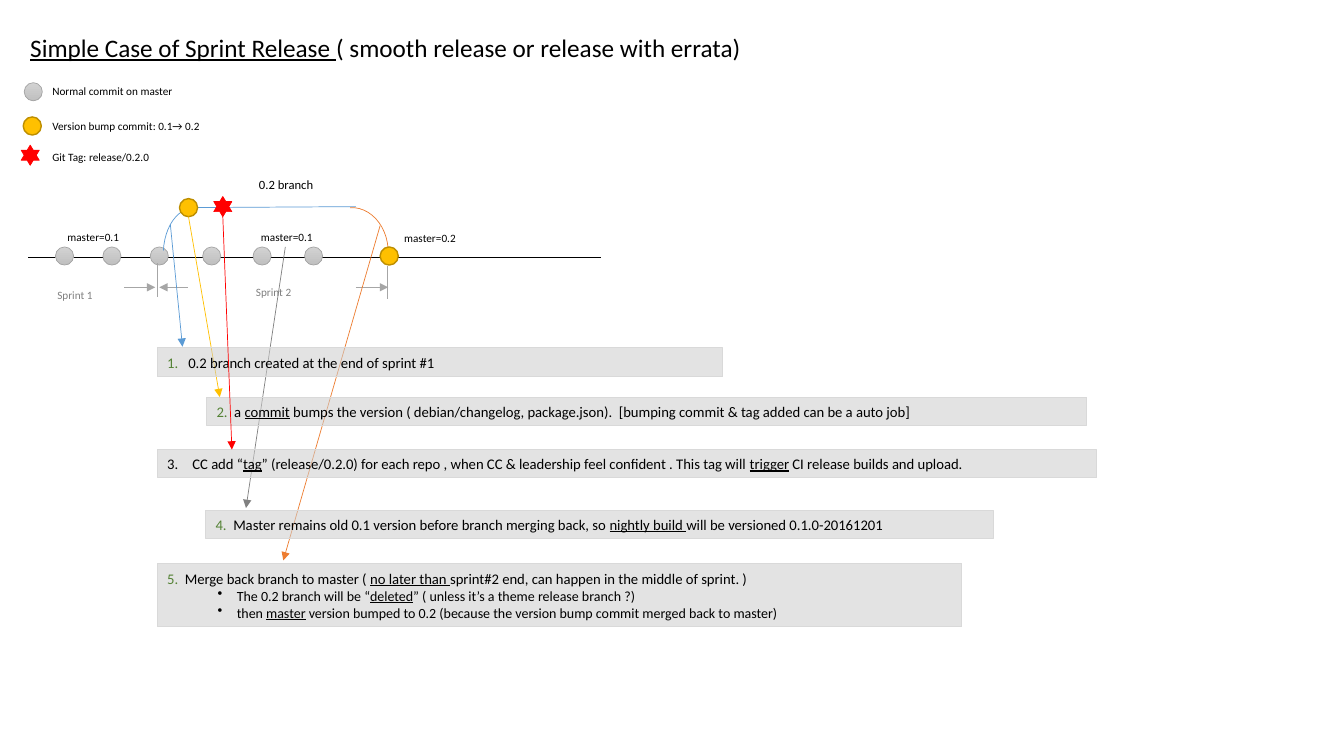
from typing import NamedTuple
from lxml.etree import SubElement as Sub
from pptx import Presentation
from pptx.dml.color import RGBColor as Rgb
from pptx.enum.shapes import MSO_CONNECTOR as Link, MSO_SHAPE as Kind
from pptx.enum.text import MSO_ANCHOR as Anchor, PP_ALIGN as Align
from pptx.oxml.ns import qn
from pptx.util import Inches, Pt

COLS, ROWS = 133.3, 75  # grid of square cells over the whole slide
CELL = Inches(0.1)
HUES = {
    "black": "000000", "grey": "808080", "rule": "A6A6A6", "edge": "A5A5A5",
    "light": "D2D2D2", "dark": "C0C0C0", "gold": "FFC000", "rim": "BD8E00",
    "red": "FF0000", "blue": "5B9BD5", "orange": "ED7D31", "green": "548235",
    "box": "CDCDCD", "frame": "D9D9D9",
}
DOT = 1.8
AXIS = 24.5  # top row of the commits on master


class Label(NamedTuple):
    text: str
    col: float
    row: float
    wide: float
    size: float = 8
    hue: str = "black"


class Line(NamedTuple):
    start: tuple[float, float]
    end: tuple[float, float]
    hue: str
    arrow: bool = False


class Curve(NamedTuple):
    col: float
    row: float
    wide: float
    high: float
    turn: float
    hue: str
    flip: bool = False


class Step(NamedTuple):
    """A numbered box; text between underscores is underlined."""
    num: str
    text: str
    col: float
    row: float
    wide: float
    high: float = 2.8
    indent: float = 1.75
    points: tuple[str, ...] = ()


LABELS = [
    Label("Normal commit on master", 4.2, 7.9, 20.2),
    Label("Version bump commit: 0.1→ 0.2", 4.2, 11.3, 20.2),
    Label("Git Tag: release/0.2.0", 4.2, 14.4, 20.2),
    Label("0.2 branch", 24.7, 17.1, 8.2, 9),
    Label("master=0.1", 5.7, 22.4, 9.5),
    Label("master=0.1", 24.9, 22.4, 9.5),
    Label("master=0.2", 39.1, 22.5, 9.5),
    Label("Sprint 1", 4.7, 28.1, 7, hue="grey"),
    Label("Sprint 2", 24.4, 27.8, 7, hue="grey"),
]
COMMITS = [(col, AXIS) for col in (5.5, 10.2, 14.9, 20.1, 25.1, 30.2)] + [(2.4, 8.2)]
BUMPS = [(37.7, AXIS), (17.8, 19.7), (2.3, 11.6)]
TAGS = [(21.2, 19.5), (2.1, 14.4)]
MASTER = Line((2.8, 25.5), (59.6, 25.5), "black")
BRANCH = Line((18.4, 20.6), (35.3, 20.5), "blue")
MARKS = [
    Line((15.6, 26.1), (15.6, 29.5), "rule"),
    Line((38.4, 26.4), (38.4, 29.7), "rule"),
    Line((12.3, 28.5), (15.4, 28.5), "rule", True),
    Line((35.3, 28.5), (38.5, 28.5), "rule", True),
    Line((18.6, 28.5), (15.8, 28.5), "rule", True),
]
ARROWS = [
    Line((16.9, 22.3), (18.1, 34.4), "blue", True),
    Line((18.7, 21.5), (21.8, 39.4), "gold", True),
    Line((37.7, 22.4), (28.1, 55.6), "orange", True),
    Line((28.3, 24.5), (24.4, 50.4), "grey", True),
]
TAG_ARROW = Line((22.1, 21.5), (23, 44.6), "red", True)
CURVES = [
    Curve(14.6, 22.3, 8.6, 5.4, 272.9, "blue"),
    Curve(30.7, 21.4, 8.6, 7, 266.4, "orange", True),
]
STEPS = [
    Step("1.", "0.2 branch created at the end of sprint #1", 15.6, 34.5, 56.1, 2.9, 2.1),
    Step("2.", "a _commit_ bumps the version ( debian/changelog, package.json).  "
         "[bumping commit & tag added can be a auto job]", 20.5, 39.4, 87.3),
    Step("", "CC add “_tag_” (release/0.2.0) for each repo , when CC & leadership feel "
         "confident . This tag will _trigger_ CI release builds and upload.",
         15.6, 44.6, 93.2, indent=2.5),
    Step("4.", "Master remains old 0.1 version before branch merging back, so "
         "_nightly build _will be versioned 0.1.0-20161201", 20.4, 50.6, 78.1),
    Step("5.", "Merge back branch to master ( _no later than _sprint#2 end, "
         "can happen in the middle of sprint. )", 15.6, 55.9, 79.8, 6.3, points=(
             "The 0.2 branch will be “_deleted_” ( unless it’s a theme release branch ?)",
             "then _master_ version bumped to 0.2 "
             "(because the version bump commit merged back to master)")),
]


def grid(*cells: float) -> list[int]:
    return [round(cell * CELL) for cell in cells]


def tint(name: str) -> Rgb:
    return Rgb.from_string(HUES[name])


def write(para, text: str, size: float, hue: str = "black") -> None:
    """Add runs, underlining every second part between underscores."""
    para.alignment = Align.LEFT
    for spot, part in enumerate(text.split("_")):
        if part:
            run = para.add_run()
            run.text = part
            form = {"name": "Calibri", "size": Pt(size), "underline": bool(spot % 2)}
            for key, value in form.items():
                setattr(run.font, key, value)
            run.font.color.rgb = tint(hue)


def hang(para, left: float, back: float, tag: str = "", **marks: str) -> None:
    """Set a hanging indent and, if a tag is given, a bullet."""
    props = para._p.get_or_add_pPr()
    props.set("marL", str(grid(left)[0]))
    props.set("indent", str(-grid(back)[0]))
    if tag:
        Sub(props, qn(tag), **marks)


def draw_label(shapes, label: Label) -> None:
    box = shapes.add_textbox(*grid(label.col, label.row, label.wide, 2.4))
    box.text_frame.word_wrap = True
    write(box.text_frame.paragraphs[0], label.text, label.size, label.hue)


def draw_line(shapes, line: Line) -> None:
    link = shapes.add_connector(Link.STRAIGHT, *grid(*line.start, *line.end))
    link.line.color.rgb = tint(line.hue)
    link.line.width = Pt(0.5)
    if line.arrow:
        Sub(link.line._get_or_add_ln(), qn("a:tailEnd"), type="triangle")
    Sub(link._element.spPr, qn("a:effectLst"))


def draw_shape(shapes, kind: Kind, area: tuple, edge: str, width: float, fill: str = ""):
    shape = shapes.add_shape(kind, *grid(*area))
    shape.shadow.inherit = False
    shape.line.color.rgb = tint(edge)
    shape.line.width = Pt(width)
    if fill:
        shape.fill.solid()
        shape.fill.fore_color.rgb = tint(fill)
    else:
        shape.fill.background()
    return shape


def draw_commit(shapes, col: float, row: float) -> None:
    fill = draw_shape(shapes, Kind.OVAL, (col, row, DOT, DOT), "edge", 0.5).fill
    fill.gradient()
    fill.gradient_angle = 270
    for stop, hue in zip(fill.gradient_stops, ("light", "dark")):
        stop.color.rgb = tint(hue)


def draw_curve(shapes, curve: Curve) -> None:
    area = (curve.col, curve.row, curve.wide, curve.high)
    arc = draw_shape(shapes, Kind.ARC, area, curve.hue, 0.5)
    arc.rotation = curve.turn
    if curve.flip:
        arc._element.spPr.xfrm.set("flipV", "1")


def draw_step(shapes, step: Step) -> None:
    area = (step.col, step.row, step.wide, step.high)
    box = draw_shape(shapes, Kind.RECTANGLE, area, "frame", 0.75, "box")
    Sub(box._element.spPr.find(qn("a:solidFill"))[0], qn("a:alpha"), val="54000")
    frame = box.text_frame
    frame.word_wrap = True
    frame.vertical_anchor = Anchor.MIDDLE
    head = frame.paragraphs[0]
    if step.num:
        hang(head, step.indent, step.indent)
        write(head, step.num + "\t", 10.5, "green")
    else:
        hang(head, step.indent, step.indent, "a:buAutoNum", type="arabicPeriod", startAt="3")
    write(head, step.text, 10.5)
    for point in step.points:
        para = frame.add_paragraph()
        para.level = 1
        hang(para, 6.9, 1.9, "a:buChar", char="•")
        write(para, point, 10)


def main() -> None:
    deck = Presentation()
    deck.slide_width, deck.slide_height = grid(COLS, ROWS)
    shapes = deck.slides.add_slide(deck.slide_layouts[5]).shapes
    title = shapes.title
    place = dict(zip(("left", "top", "width", "height"), grid(2, 2.7, 85.5, 4)))
    for key, value in place.items():
        setattr(title, key, value)
    title.text_frame.vertical_anchor = Anchor.TOP
    write(title.text_frame.paragraphs[0], "_Simple Case of Sprint Release _"
          "( smooth release or release with errata)", 18)

    draw_line(shapes, MASTER)
    for spot in COMMITS:
        draw_commit(shapes, *spot)
    for line in [*MARKS, BRANCH]:
        draw_line(shapes, line)
    for curve in CURVES:
        draw_curve(shapes, curve)
    for spot in BUMPS:
        draw_shape(shapes, Kind.OVAL, (*spot, DOT, DOT), "rim", 1, "gold")
    for label in LABELS:
        draw_label(shapes, label)
    for line in ARROWS:
        draw_line(shapes, line)
    for step in STEPS:
        draw_step(shapes, step)
    for spot in TAGS:
        draw_shape(shapes, Kind.STAR_6_POINT, (*spot, DOT, 2), "red", 0.5, "red")
    draw_line(shapes, TAG_ARROW)
    deck.save("out.pptx")


if __name__ == "__main__":
    main()
